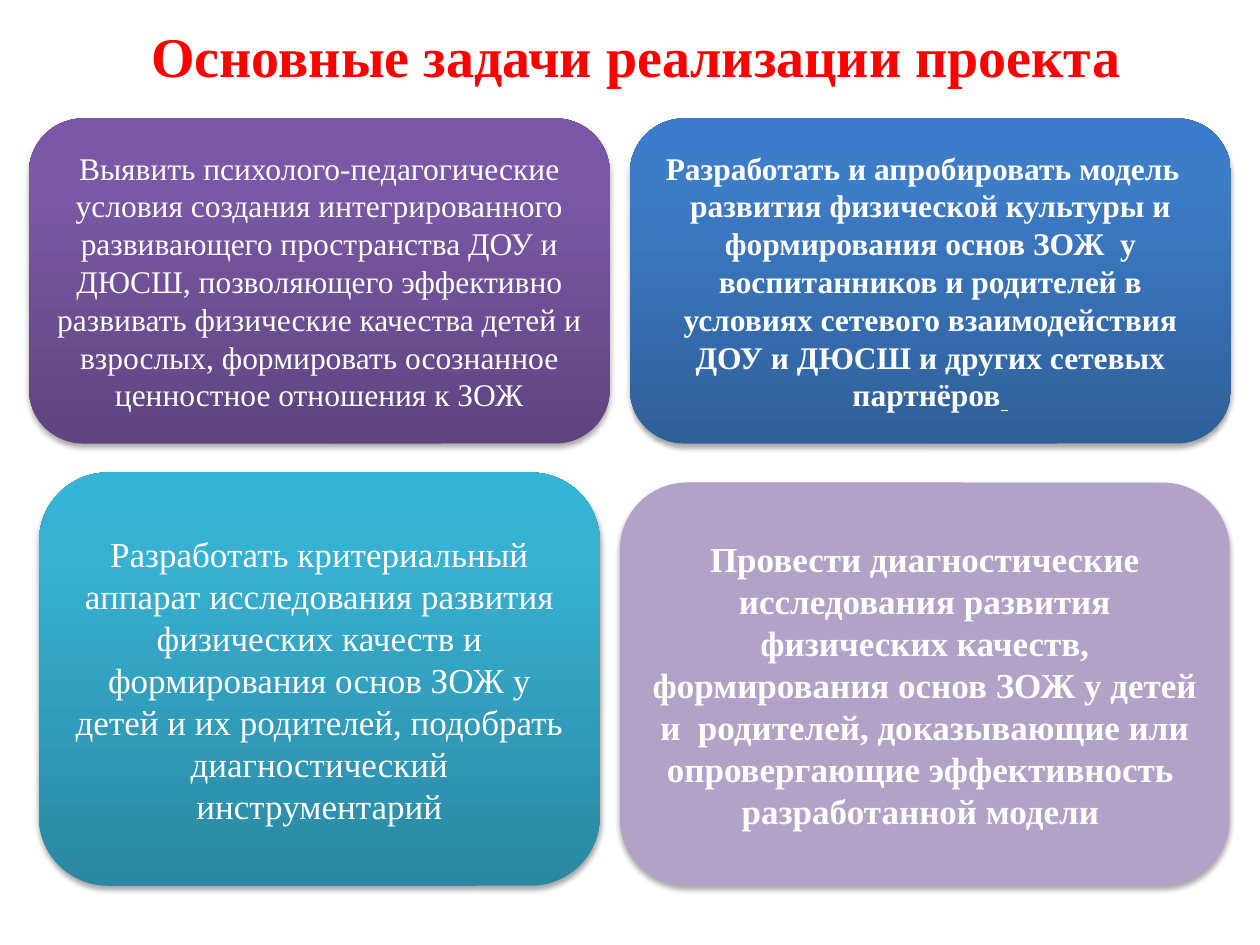
from copy import deepcopy
from dataclasses import dataclass

from lxml import etree
from pptx import Presentation
from pptx import util as u
from pptx.dml.color import RGBColor
from pptx.enum import shapes, text
from pptx.oxml.ns import qn


@dataclass(frozen=True)
class Theme:
    font: str = "Times New Roman"
    title_color: str = "FF0000"
    card_text: str = "FFFFFF"
    shadow: str = "000000"
    title_size: int = 32
    upper_size: int = 18
    lower_size: int = 20
    purple: tuple = ("5F4480", "7B58A6", "7C57A8")
    blue: tuple = ("2F5F99", "3D7CC7", "3A7CCB")
    teal: tuple = ("2A88A2", "37B1D2", "34B4D6")
    lilac: tuple = ("B3A2C7",)


@dataclass(frozen=True)
class Card:
    box: tuple
    colors: tuple
    size: int
    bold: bool
    wording: str
    underlined_tail: str = ""


THEME = Theme()
GRADIENT_POSITIONS = (0, 0.8, 1)
CARDS = (
    Card((0.23, 0.94, 4.61, 2.58), THEME.purple, THEME.upper_size, False,
         "Выявить психолого-педагогические условия создания интегрированного "
         "развивающего пространства ДОУ и ДЮСШ, позволяющего эффективно развивать "
         "физические качества детей и взрослых, формировать осознанное ценностное "
         "отношения к ЗОЖ"),
    Card((5, 0.94, 4.77, 2.58), THEME.blue, THEME.upper_size, True,
         "Разработать и апробировать модель   развития физической культуры и "
         "формирования основ ЗОЖ  у воспитанников и родителей в условиях сетевого "
         "взаимодействия ДОУ и ДЮСШ и других сетевых партнёров", " "),
    Card((0.31, 3.75, 4.45, 3.28), THEME.teal, THEME.lower_size, False,
         "Разработать критериальный аппарат исследования развития физических качеств "
         "и формирования основ ЗОЖ у детей и их родителей, подобрать диагностический "
         "инструментарий"),
    Card((4.92, 3.83, 4.84, 3.2), THEME.lilac, THEME.lower_size, True,
         "Провести диагностические исследования развития физических качеств, "
         "формирования основ ЗОЖ у детей и  родителей, доказывающие или опровергающие "
         "эффективность  разработанной модели "),
)


def add_run(paragraph, wording: str, color: str, size: int, bold: bool,
            underline: bool = False) -> None:
    run = paragraph.add_run()
    run.text = wording
    formats = {"name": THEME.font, "size": u.Pt(size), "bold": bold}
    if underline:
        formats["underline"] = True
    for name, value in formats.items():
        setattr(run.font, name, value)
    run.font.color.rgb = RGBColor.from_string(color)


def centred_paragraph(shape):
    frame = shape.text_frame
    frame.word_wrap = True
    frame.vertical_anchor = text.MSO_ANCHOR.MIDDLE
    paragraph = frame.paragraphs[0]
    paragraph.alignment = text.PP_ALIGN.CENTER
    return paragraph


def fill_shape(shape, colors: tuple) -> None:
    if len(colors) == 1:
        shape.fill.solid()
        shape.fill.fore_color.rgb = RGBColor.from_string(colors[0])
        return
    shape.fill.gradient()
    shape.fill.gradient_angle = 90
    stop_list = next(shape.element.spPr.iter(qn("a:gsLst")))
    stop_list.insert(1, deepcopy(stop_list[0]))
    for stop, position, color in zip(shape.fill.gradient_stops, GRADIENT_POSITIONS, colors):
        stop.position = position
        stop.color.rgb = RGBColor.from_string(color)


def add_shadow(shape) -> None:
    shape.shadow.inherit = False
    effects = shape.element.spPr.find(qn("a:effectLst"))
    shadow = etree.SubElement(effects, qn("a:outerShdw"), blurRad=str(u.Pt(3.1)),
                              dist=str(u.Pt(1.8)), dir="5400000", rotWithShape="0")
    color = etree.SubElement(shadow, qn("a:srgbClr"), val=THEME.shadow)
    etree.SubElement(color, qn("a:alpha"), val="35000")


def add_title(slide, wording: str) -> None:
    title = slide.shapes.add_textbox(*map(u.Inches, (0.55, 0.16, 9, 0.56)))
    add_run(centred_paragraph(title), wording, THEME.title_color, THEME.title_size, True)


def add_card(slide, card: Card) -> None:
    shape = slide.shapes.add_shape(
        shapes.MSO_SHAPE.ROUNDED_RECTANGLE, *map(u.Inches, card.box))
    fill_shape(shape, card.colors)
    shape.line.fill.background()
    add_shadow(shape)
    paragraph = centred_paragraph(shape)
    add_run(paragraph, card.wording, THEME.card_text, card.size, card.bold)
    if card.underlined_tail:
        add_run(paragraph, card.underlined_tail, THEME.card_text, card.size, card.bold, True)


def main() -> None:
    presentation = Presentation()
    presentation.slide_width = u.Inches(10)
    presentation.slide_height = u.Inches(7.5)
    slide = presentation.slides.add_slide(presentation.slide_layouts[6])
    add_title(slide, "Основные задачи реализации проекта")
    for card in CARDS:
        add_card(slide, card)
    presentation.save("out.pptx")


if __name__ == "__main__":
    main()
